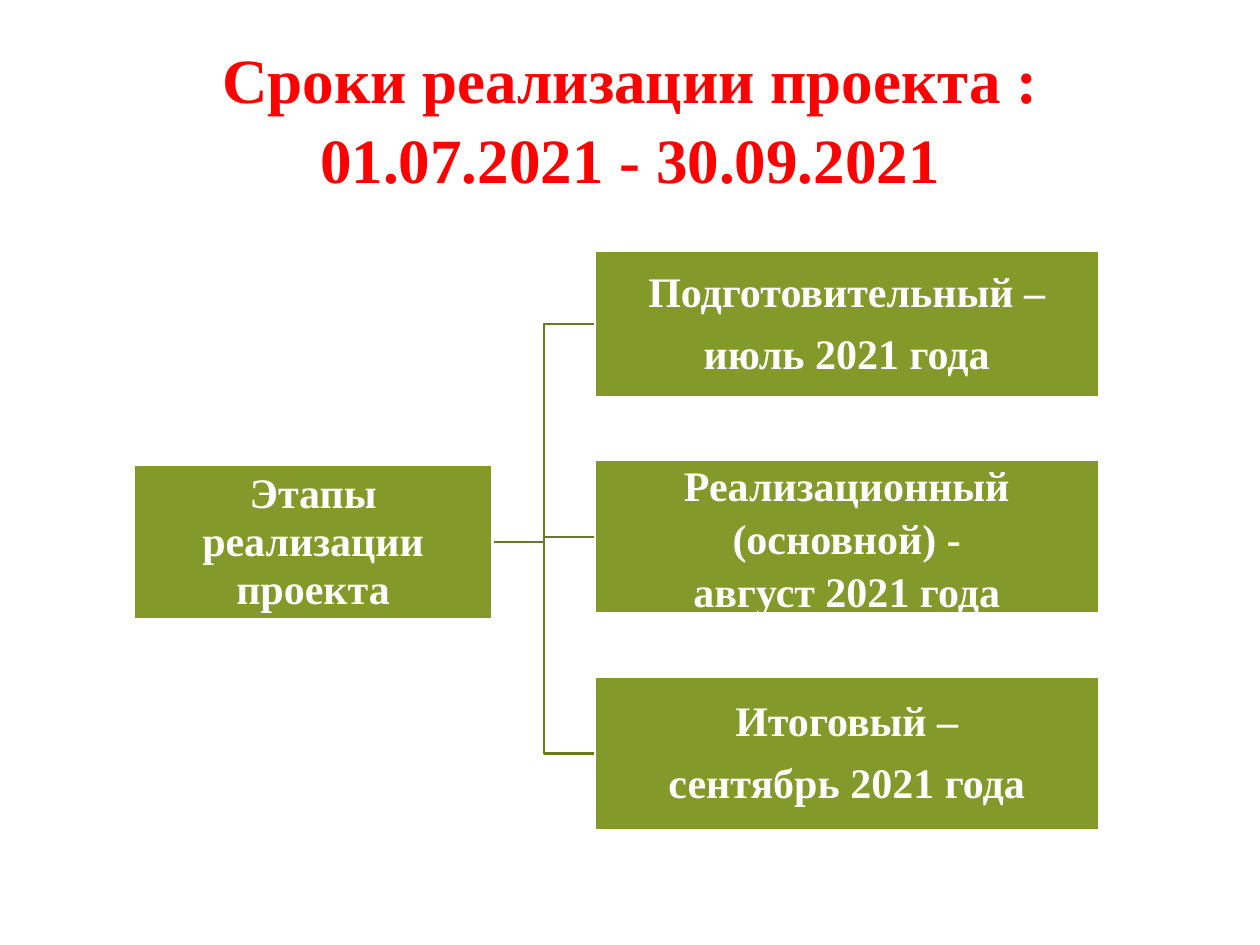
"""Build the slide with the project dates and its tree of stages."""
import dataclasses

import pptx
import pptx.dml.color
import pptx.enum.shapes
import pptx.enum.text
import pptx.util

Inches = pptx.util.Inches
Pt = pptx.util.Pt
COLORS = {"title": "FF0000", "fill": "83992A", "line": "697B22", "white": "FFFFFF"}


@dataclasses.dataclass
class Box:
    left: float
    top: float
    width: float
    height: float
    lines: list[str]
    spacing: float = 0.95
    after: float = 8
    inset: float = 0.02


ROOT = Box(1.06, 3.69, 2.85, 1.22, ["Этапы реализации проекта"])
STAGES = [
    Box(4.72, 1.99, 4, 1.16, ["Подготовительный –", "июль 2021 года"]),
    Box(4.72, 3.65, 4, 1.22, ["Реализационный (основной) -", "август 2021 года"], 1.05, 0, 0.01),
    Box(4.72, 5.37, 4, 1.22, ["Итоговый –", "сентябрь 2021 года"]),
]
TITLE = Box(0.5, 0.3, 9, 1.25, ["Сроки реализации проекта :\v01.07.2021 - 30.09.2021"], 1.05, 0, 0.1)


def tint(name: str) -> pptx.dml.color.RGBColor:
    return pptx.dml.color.RGBColor.from_string(COLORS[name])


def place(box: Box) -> list[int]:
    return [Inches(n) for n in (box.left, box.top, box.width, box.height)]


def assign(item, values: dict) -> None:
    for name, value in values.items():
        setattr(item, name, value)


def write(shape, box: Box, size: float, color: str) -> None:
    frame = shape.text_frame
    sides = ("margin_left", "margin_top", "margin_right", "margin_bottom")
    assign(frame, dict.fromkeys(sides, Inches(box.inset)))
    assign(frame, {"word_wrap": True, "vertical_anchor": pptx.enum.text.MSO_ANCHOR.MIDDLE})
    frame.text = "\n".join(box.lines)
    for para in frame.paragraphs:
        assign(para, {
            "alignment": pptx.enum.text.PP_ALIGN.CENTER,
            "line_spacing": box.spacing,
            "space_after": Pt(box.after),
        })
        for run in para.runs:
            assign(run.font, {"name": "Times New Roman", "size": Pt(size), "bold": True})
            run.font.color.rgb = tint(color)


def stroke(shape, color: str) -> None:
    shape.shadow.inherit = False
    shape.line.color.rgb = tint(color)
    shape.line.width = Pt(1.25)


def draw(shapes, box: Box) -> None:
    shape = shapes.add_shape(pptx.enum.shapes.MSO_SHAPE.RECTANGLE, *place(box))
    shape.fill.solid()
    shape.fill.fore_color.rgb = tint("fill")
    stroke(shape, "white")
    write(shape, box, 24, "white")


def branch(shapes, root: Box, stage: Box) -> None:
    start = root.left + root.width
    middle = (start + stage.left) / 2
    first = root.top + root.height / 2
    last = stage.top + stage.height / 2
    points = [(middle, first), (middle, last), (stage.left, last)]
    path = shapes.build_freeform(Inches(start), Inches(first))
    path.add_line_segments([(Inches(x), Inches(y)) for x, y in points], close=False)
    shape = path.convert_to_shape()
    shape.fill.background()
    stroke(shape, "line")


def main() -> None:
    deck = pptx.Presentation()
    assign(deck, {"slide_width": Inches(10), "slide_height": Inches(7.5)})
    shapes = deck.slides.add_slide(deck.slide_layouts[6]).shapes
    write(shapes.add_textbox(*place(TITLE)), TITLE, 36, "title")
    for stage in reversed(STAGES):
        branch(shapes, ROOT, stage)
    for box in [ROOT, *STAGES]:
        draw(shapes, box)
    deck.save("out.pptx")


if __name__ == "__main__":
    main()
